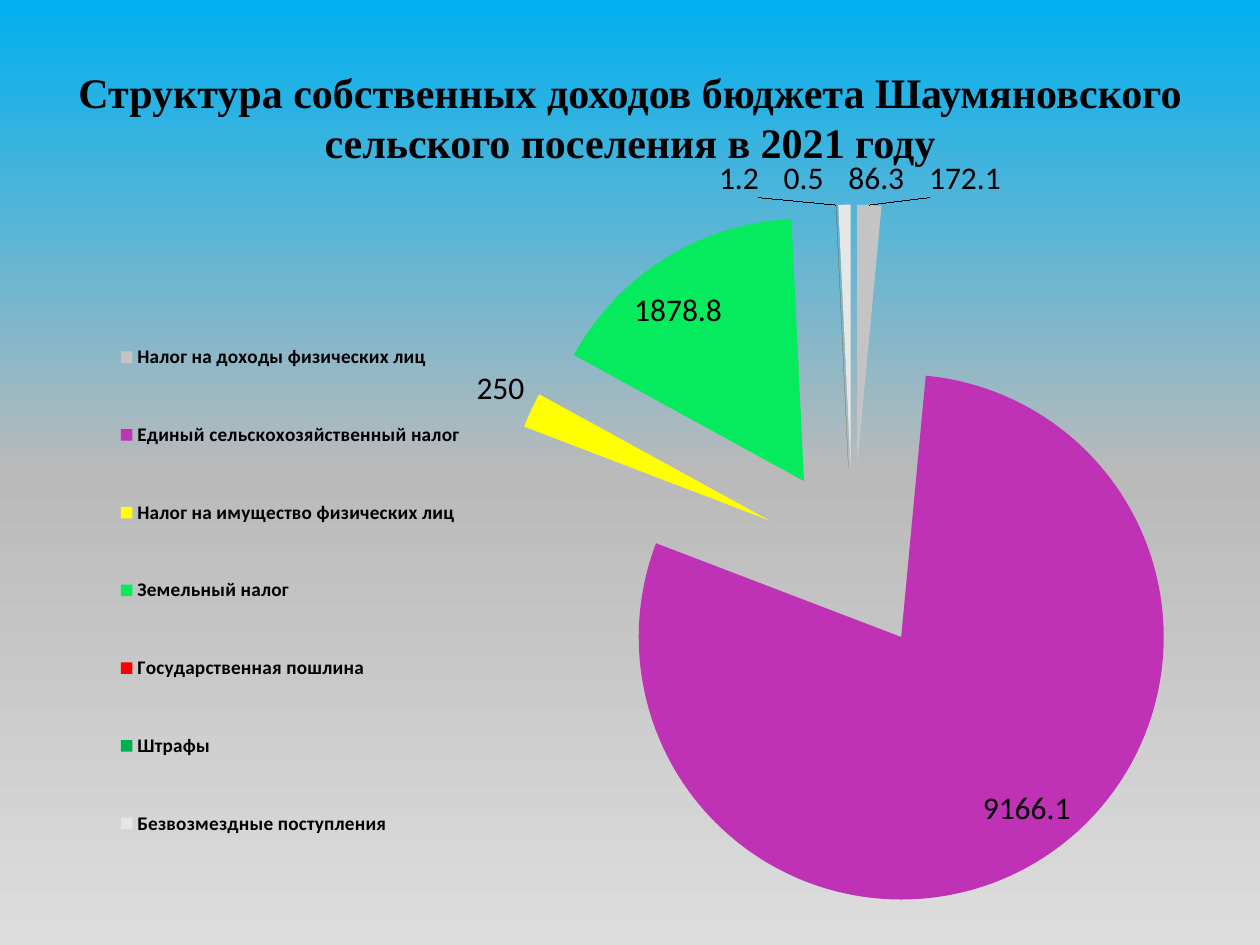
from copy import deepcopy

from lxml.etree import SubElement
from pptx import Presentation
from pptx.chart.data import CategoryChartData
from pptx.dml.color import RGBColor
from pptx.enum.chart import XL_CHART_TYPE, XL_LABEL_POSITION, XL_LEGEND_POSITION
from pptx.enum.text import MSO_ANCHOR, PP_ALIGN
from pptx.oxml import parse_xml
from pptx.oxml.ns import nsdecls, qn
from pptx.util import Inches, Pt

COLORS = {
    "sky": "00B0F0", "gray": "BABABA", "pale": "DDDDDD", "text": "000000",
    "silver": "C4C4C4", "purple": "BF31B5", "yellow": "FFFF00", "lime": "05EB5D",
    "red": "FF0000", "green": "00B050", "white": "E6E6E6",
}
INCOME = [
    ("Налог на доходы физических лиц", 172.1, "silver"),
    ("Единый сельскохозяйственный налог", 9166.1, "purple"),
    ("Налог на имущество физических лиц", 250, "yellow"),
    ("Земельный налог", 1878.8, "lime"),
    ("Государственная пошлина", 1.2, "red"),
    ("Штрафы", 0.5, "green"),
    ("Безвозмездные поступления", 86.3, "white"),
]


class SlideBuilder:
    """Holds the style and the current slide and adds elements to it."""

    def __init__(self, page):
        self.page = page
        self.title_font = "Times New Roman"
        self.chart_font = "Calibri"

    def color(self, name):
        return RGBColor.from_string(COLORS[name])

    def style(self, font, name, size, bold=False):
        font.name, font.size, font.bold = name, Pt(size), bold
        font.color.rgb = self.color("text")

    def background(self, stops):
        fill = self.page.background.fill
        fill.gradient()
        fill.gradient_angle = 270
        stop_list = next(self.page.element.iter(qn("a:gsLst")))
        while len(stop_list) < len(stops):
            stop_list.append(deepcopy(stop_list[0]))
        for stop, (position, name) in zip(fill.gradient_stops, stops):
            stop.position = position
            stop.color.rgb = self.color(name)

    def title(self, text, left, top, width, height):
        box = self.page.shapes.title
        box.left, box.top = Inches(left), Inches(top)
        box.width, box.height = Inches(width), Inches(height)
        box.text_frame.word_wrap = True
        box.text_frame.vertical_anchor = MSO_ANCHOR.MIDDLE
        para = box.text_frame.paragraphs[0]
        para.alignment = PP_ALIGN.CENTER
        span = para.add_run()
        span.text = text
        self.style(span.font, self.title_font, 24, bold=True)

    def layout(self, element, x, y, w, h, inner=False):
        for old in element.findall(qn("c:layout")):
            element.remove(old)
        layout = parse_xml(f"<c:layout {nsdecls('c')}><c:manualLayout/></c:layout>")
        target = [("layoutTarget", "inner")] if inner else []
        modes = [("xMode", "edge"), ("yMode", "edge")]
        for tag, value in target + modes + [("x", x), ("y", y), ("w", w), ("h", h)]:
            SubElement(layout[0], qn(f"c:{tag}")).set("val", str(value))
        if inner:
            element.insert(0, layout)
        else:
            element.find(qn("c:legendPos")).addnext(layout)

    def pie(self, rows, left, top, width, height, explosion):
        data = CategoryChartData()
        data.categories = [label for label, _, _ in rows]
        data.add_series("Series 1", [value for _, value, _ in rows])
        chart = self.page.shapes.add_chart(
            XL_CHART_TYPE.PIE, Inches(left), Inches(top), Inches(width), Inches(height), data
        ).chart
        chart.has_title = False
        self.style(chart.font, self.chart_font, 18)
        plot = chart.plots[0]
        plot.vary_by_categories = True
        series = plot.series[0]
        for index, (_, _, name) in enumerate(rows):
            fill = series.points[index].format.fill
            fill.solid()
            fill.fore_color.rgb = self.color(name)
        series_xml = next(chart.element.iter(qn("c:ser")))
        series_xml.find(qn("c:dPt")).addprevious(
            parse_xml(f'<c:explosion {nsdecls("c")} val="{explosion}"/>')
        )
        labels = series.data_labels
        labels.show_value = True
        labels.position = XL_LABEL_POSITION.BEST_FIT
        self.style(labels.font, self.chart_font, 18)
        chart.has_legend = True
        chart.legend.position = XL_LEGEND_POSITION.RIGHT
        chart.legend.include_in_layout = False
        self.style(chart.legend.font, self.chart_font, 11, bold=True)
        self.layout(next(chart.element.iter(qn("c:legend"))), 0.09, 0.17, 0.29, 0.76)
        self.layout(next(chart.element.iter(qn("c:plotArea"))), 0.39, 0.06, 0.6, 0.9, inner=True)


def main():
    deck = Presentation()
    deck.slide_width, deck.slide_height = Inches(10), Inches(7.5)
    builder = SlideBuilder(deck.slides.add_slide(deck.slide_layouts[5]))
    builder.background([(0, "sky"), (0.5, "gray"), (1, "pale")])
    builder.title(
        "Структура собственных доходов бюджета Шаумяновского сельского поселения в 2021 году",
        0.5, 0.3, 9, 1.25,
    )
    builder.pie(INCOME, 0, 1.25, 9.81, 6.25, explosion=35)
    deck.save("out.pptx")


if __name__ == "__main__":
    main()
